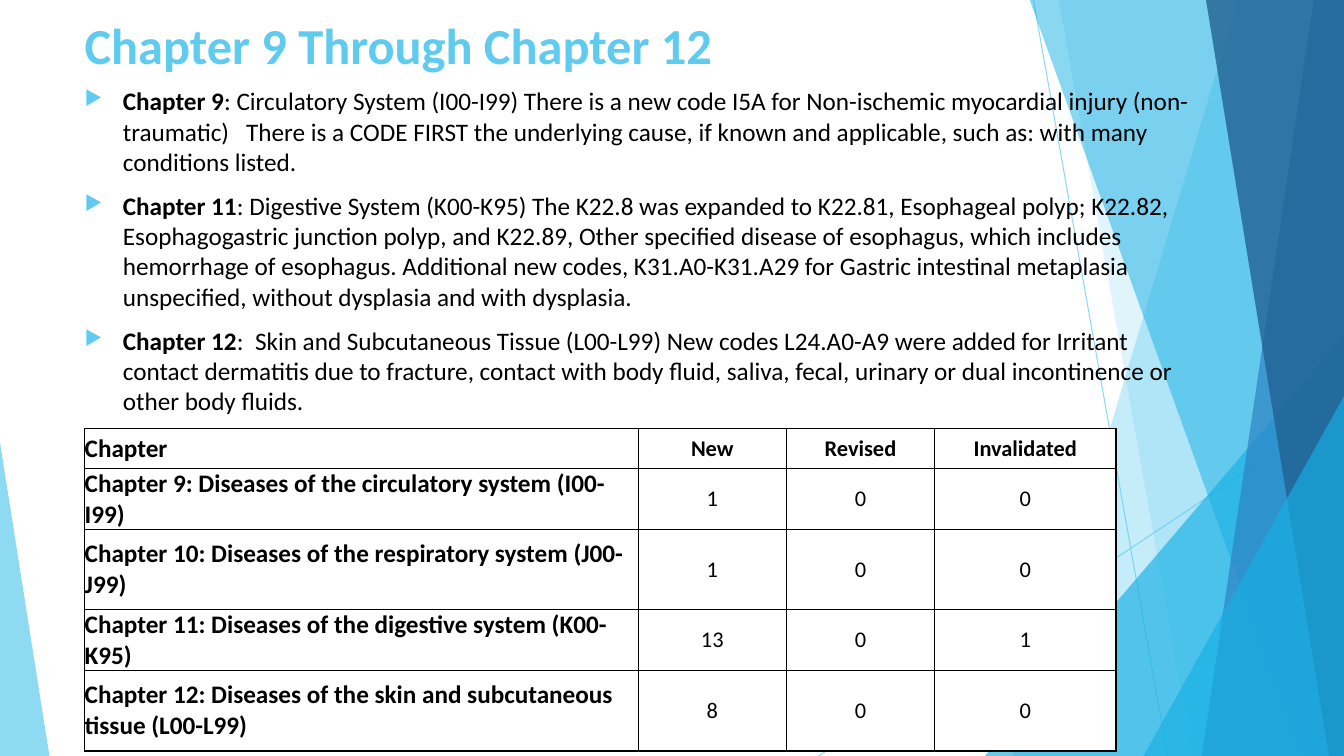
from lxml import etree
from pptx import Presentation
from pptx.dml.color import RGBColor
from pptx.enum.shapes import MSO_CONNECTOR, MSO_SHAPE
from pptx.enum.text import MSO_ANCHOR, PP_ALIGN
from pptx.oxml.ns import qn
from pptx.util import Inches, Pt

STRAIGHT = MSO_CONNECTOR.STRAIGHT
TRIANGLE = MSO_SHAPE.ISOSCELES_TRIANGLE
MIDDLE = MSO_ANCHOR.MIDDLE
CENTER = PP_ALIGN.CENTER
LEFT = PP_ALIGN.LEFT

FONT = "Calibri"
COLORS = {
    "sky": "5FCBEF",
    "cyan": "17B0E4",
    "blue": "2E83C3",
    "navy": "226292",
    "black": "000000",
    "white": "FFFFFF",
}
WIDTH, HEIGHT = 13.33, 7.5
BAND_TOP = -0.01

RAYS = [((10.25, 0), (11.58, HEIGHT)), ((WIDTH, 4.03), (8.12, HEIGHT))]
# top-left x, bottom-left x, colour, opacity
BACK_BANDS = [(12.28, 10.04, "sky", 36), (10.5, 11.83, "sky", 20)]
FRONT_BANDS = [
    (10.21, 12.91, "cyan", 50),
    (13.03, 11.92, "blue", 70),
    (11.96, 13.18, "navy", 80),
]

BULLETS = [
    ("Chapter 9", ": Circulatory System (I00-I99) There is a new code I5A for Non-ischemic "
     "myocardial injury (non-traumatic)   There is a CODE FIRST the underlying cause, "
     "if known and applicable, such as: with many conditions listed. "),
    ("Chapter 11", ": Digestive System (K00-K95) The K22.8 was expanded to K22.81, Esophageal "
     "polyp; K22.82, Esophagogastric junction polyp, and K22.89, Other specified disease of "
     "esophagus, which includes hemorrhage of esophagus. Additional new codes, K31.A0-K31.A29 "
     "for Gastric intestinal metaplasia unspecified, without dysplasia and with dysplasia. "),
    ("Chapter 12", ":  Skin and Subcutaneous Tissue (L00-L99) New codes L24.A0-A9 were added "
     "for Irritant contact dermatitis due to fracture, contact with body fluid, saliva, fecal, "
     "urinary or dual incontinence or other body fluids. "),
]

CODE_COUNTS = [
    ("Chapter", "New", "Revised", "Invalidated"),
    ("Chapter 9: Diseases of the circulatory system (I00-I99)", "1", "0", "0"),
    ("Chapter 10: Diseases of the respiratory system (J00-J99)", "1", "0", "0"),
    ("Chapter 11: Diseases of the digestive system (K00-K95)", "13", "0", "1"),
    ("Chapter 12: Diseases of the skin and subcutaneous tissue (L00-L99)", "8", "0", "0"),
]
COL_WIDTHS = [5.49, 1.47, 1.47, 1.8]
ROW_HEIGHTS = [0.4, 0.54, 0.8, 0.45, 0.8]


def rgb(name):
    return RGBColor.from_string(COLORS[name])


def add_xml(parent, tag, **attrs):
    return etree.SubElement(parent, qn(tag), attrs)


def add_color(parent, name):
    return add_xml(parent, "a:srgbClr", val=COLORS[name])


def set_opacity(sp, percent):
    """Set the opacity of the one colour in the shape's properties."""
    color = sp.element.spPr.find(".//" + qn("a:srgbClr"))
    add_xml(color, "a:alpha", val=str(percent * 1000))


def style_facet(sp, color, opacity):
    sp.shadow.inherit = False
    sp.fill.solid()
    sp.fill.fore_color.rgb = rgb(color)
    set_opacity(sp, opacity)
    sp.line.fill.background()


def add_ray(s, start, end):
    points = [Inches(v) for v in (*start, *end)]
    line = s.shapes.add_connector(STRAIGHT, *points)
    line.line.color.rgb = rgb("sky")
    line.line.width = Pt(0.75)
    set_opacity(line, 70)
    add_xml(line.element.spPr, "a:effectLst")


def add_band(s, top_x, bottom_x, color, opacity):
    """Add a full-height facet that ends at the right edge of the slide."""
    corners = [(WIDTH, BAND_TOP), (WIDTH, HEIGHT), (bottom_x, HEIGHT)]
    builder = s.shapes.build_freeform(Inches(top_x), Inches(BAND_TOP))
    builder.add_line_segments([(Inches(x), Inches(y)) for x, y in corners])
    style_facet(builder.convert_to_shape(), color, opacity)


def add_triangle(s, x, y, w, h, apex, color, opacity):
    sp = s.shapes.add_shape(TRIANGLE, Inches(x), Inches(y), Inches(w), Inches(h))
    sp.adjustments[0] = apex
    style_facet(sp, color, opacity)


def add_textbox(s, x, y, w, h):
    tf = s.shapes.add_textbox(Inches(x), Inches(y), Inches(w), Inches(h)).text_frame
    tf.word_wrap = True
    return tf


def format_run(r, size, bold, color="black"):
    r.font.name = FONT
    r.font.size = Pt(size)
    r.font.bold = bold
    r.font.color.rgb = rgb(color)


def add_title(s, text):
    tf = add_textbox(s, 0.74, 0.09, 9.4, 0.71)
    tf.text = text
    format_run(tf.paragraphs[0].runs[0], 36, True, "sky")


def set_bullet(p):
    p.space_before = Pt(10)
    pPr = p._p.get_or_add_pPr()
    pPr.set("marL", str(Inches(0.38)))
    pPr.set("indent", str(-Inches(0.38)))
    add_color(add_xml(pPr, "a:buClr"), "sky")
    add_xml(pPr, "a:buSzPct", val="80000")
    add_xml(pPr, "a:buChar", char="▶")


def add_bullets(s, bullets):
    tf = add_textbox(s, 0.74, 0.8, 11.32, 6.44)
    for i, parts in enumerate(bullets):
        p = tf.add_paragraph() if i else tf.paragraphs[0]
        set_bullet(p)
        for text, bold in zip(parts, (True, False)):
            r = p.add_run()
            r.text = text
            format_run(r, 18, bold)


def set_borders(cell):
    tcPr = cell._tc.get_or_add_tcPr()
    for side in ("a:lnL", "a:lnR", "a:lnT", "a:lnB"):
        ln = add_xml(tcPr, side, w=str(Pt(1)))
        add_color(add_xml(ln, "a:solidFill"), "black")


def fill_cell(cell, text, size, bold, align):
    set_borders(cell)
    cell.fill.solid()
    cell.fill.fore_color.rgb = rgb("white")
    cell.vertical_anchor = MIDDLE
    cell.margin_left = cell.margin_right = cell.margin_top = cell.margin_bottom = 0
    cell.text = text
    p = cell.text_frame.paragraphs[0]
    p.alignment = align
    format_run(p.runs[0], size, bold)


def add_count_table(s, rows):
    frame = s.shapes.add_table(len(rows), len(COL_WIDTHS), Inches(0.84), Inches(4.25),
                               Inches(sum(COL_WIDTHS)), Inches(sum(ROW_HEIGHTS)))
    table = frame.table
    for column, width in zip(table.columns, COL_WIDTHS):
        column.width = Inches(width)
    for row, height in zip(table.rows, ROW_HEIGHTS):
        row.height = Inches(height)
    for i, row in enumerate(rows):
        for j, text in enumerate(row):
            size, align = (16, CENTER) if j else (18, LEFT)
            fill_cell(table.cell(i, j), text, size, i == 0 or j == 0, align)


def main():
    prs = Presentation()
    prs.slide_width, prs.slide_height = Inches(WIDTH), Inches(HEIGHT)
    s = prs.slides.add_slide(prs.slide_layouts[6])
    for ray in RAYS:
        add_ray(s, *ray)
    for band in BACK_BANDS:
        add_band(s, *band)
    add_triangle(s, 9.77, 3.33, 3.56, 4.17, 1, "cyan", 66)
    for band in FRONT_BANDS:
        add_band(s, *band)
    add_triangle(s, 11.34, 3.93, 1.99, 3.57, 1, "cyan", 66)
    add_triangle(s, 0, 4.39, 0.49, 3.11, 0, "sky", 70)
    add_title(s, "Chapter 9 Through Chapter 12")
    add_bullets(s, BULLETS)
    add_count_table(s, CODE_COUNTS)
    prs.save("out.pptx")


if __name__ == "__main__":
    main()
